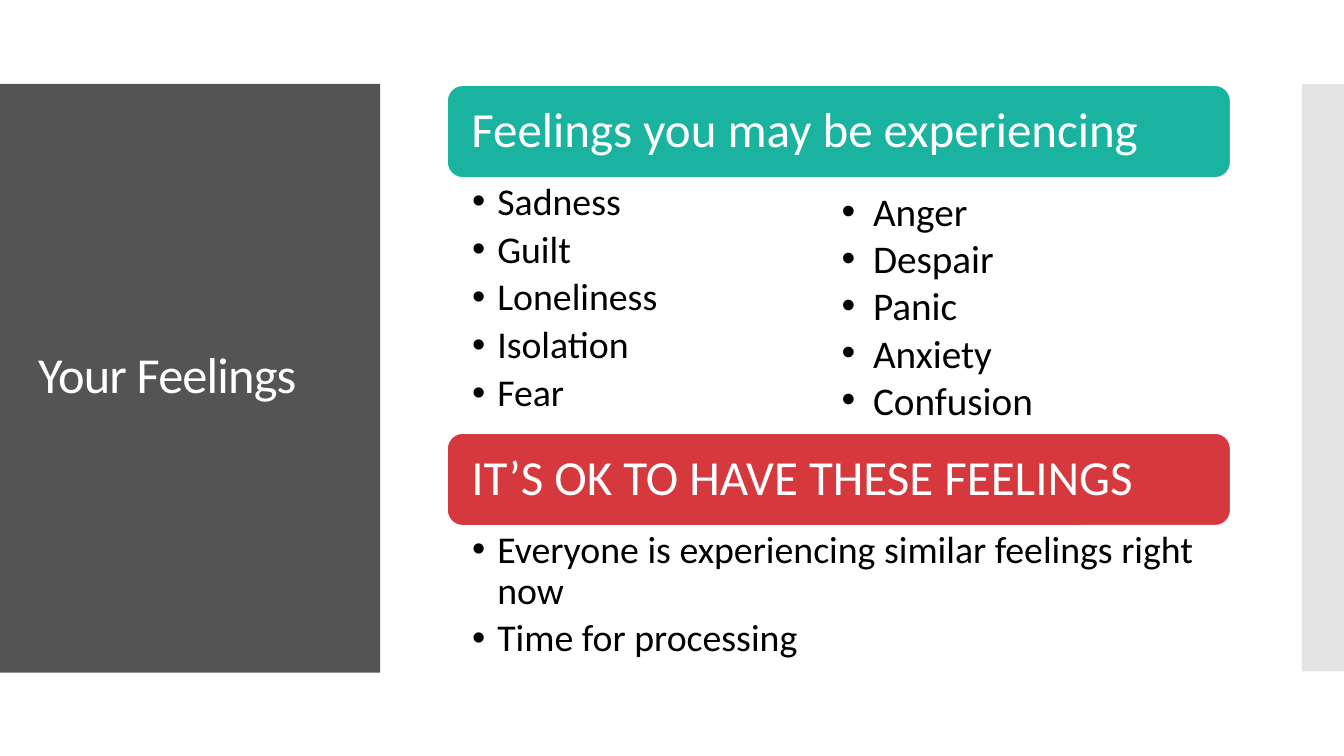
from lxml import etree
from pptx import Presentation
from pptx import util as u
from pptx.dml.color import RGBColor
from pptx.enum import shapes, text
from pptx.oxml.ns import qn

Pt = u.Pt
FONT = "Calibri"
COLORS = {
    "panel": "545454",
    "edge": "C8C8C8",
    "teal": "1AB39F",
    "red": "D5393D",
    "white": "FFFFFF",
    "black": "000000",
}
LEFT, WIDTH, BAR_HEIGHT = 319.5, 559.5, 66


def rgb(name):
    return RGBColor.from_string(COLORS[name])


def set_font(p, size, color):
    p.font.name = FONT
    p.font.size = Pt(size)
    p.font.color.rgb = rgb(color)


def set_frame(tf, anchor, margins):
    tf.word_wrap = True
    tf.vertical_anchor = anchor
    tf.margin_left, tf.margin_top, tf.margin_right, tf.margin_bottom = map(Pt, margins)


def add_box(s, kind, box, fill):
    sp = s.shapes.add_shape(kind, *map(Pt, box))
    sp.shadow.inherit = False
    sp.fill.solid()
    sp.fill.fore_color.rgb = rgb(fill)
    sp.line.fill.background()
    return sp


def add_edge(s):
    sp = add_box(s, shapes.MSO_SHAPE.RECTANGLE, (930, 60, 30, 419.5), "edge")
    color = sp.fill._xPr.find(qn("a:solidFill"))[0]
    etree.SubElement(color, qn("a:alpha"), val="50000")


def add_title(s, words):
    panel = add_box(s, shapes.MSO_SHAPE.RECTANGLE, (0, 60, 271.5, 420.5), "panel")
    title = s.shapes.title
    title.element.addprevious(panel.element)
    title.left, title.top, title.width, title.height = map(Pt, (20, 88.5, 232, 362.5))
    tf = title.text_frame
    tf.text = words
    set_frame(tf, text.MSO_ANCHOR.MIDDLE, (7.2, 3.6, 7.2, 3.6))
    p = tf.paragraphs[0]
    p.alignment = text.PP_ALIGN.LEFT
    p.line_spacing = 0.9
    set_font(p, 36, "white")
    p.runs[0].font._element.set("spc", "-60")


def add_bar(s, top, words, fill):
    sp = add_box(s, shapes.MSO_SHAPE.ROUNDED_RECTANGLE, (LEFT, top, WIDTH, BAR_HEIGHT), fill)
    sp.line.color.rgb = rgb("white")
    sp.line.width = Pt(0.85)
    tf = sp.text_frame
    tf.text = words
    set_frame(tf, text.MSO_ANCHOR.MIDDLE, (14, 11, 14, 11))
    p = tf.paragraphs[0]
    p.alignment = text.PP_ALIGN.LEFT
    p.line_spacing = 0.9
    set_font(p, 35, "white")


def add_bullets(s, box, items, size, indent, margins, spacing=1.0, after=0):
    tf = s.shapes.add_textbox(*map(Pt, box)).text_frame
    set_frame(tf, text.MSO_ANCHOR.TOP, margins)
    tf.text = "\n".join(items)
    for p in tf.paragraphs:
        p.line_spacing = spacing
        p.space_after = Pt(after)
        set_font(p, size, "black")
        pPr = p._p.get_or_add_pPr()
        pPr.set("marL", str(Pt(indent)))
        pPr.set("indent", str(-Pt(indent)))
        bullet_font = etree.Element(qn("a:buFont"), typeface="Arial")
        bullet = etree.Element(qn("a:buChar"), char="•")
        defaults = pPr.find(qn("a:defRPr"))
        defaults.addprevious(bullet_font)
        defaults.addprevious(bullet)


def add_section(s, top, heading, fill, items, height):
    add_bar(s, top, heading, fill)
    add_bullets(s, (LEFT, top + BAR_HEIGHT, WIDTH, height), items,
                27, 18, (17.75, 3.4, 19.2, 3.4), 0.9, 5)


def main():
    prs = Presentation()
    prs.slide_width, prs.slide_height = Pt(960), Pt(540)
    s = prs.slides.add_slide(prs.slide_layouts[5])
    add_edge(s)
    add_title(s, "Your Feelings")
    add_section(s, 61, "Feelings you may be experiencing", "teal",
                ["Sadness", "Guilt", "Loneliness", "Isolation", "Fear"], 183)
    add_section(s, 309.5, "IT’S OK TO HAVE THESE FEELINGS", "red",
                ["Everyone is experiencing similar feelings right now",
                 "Time for processing"], 103)
    add_bullets(s, (594, 130.5, 255.5, 177),
                ["Anger", "Despair", "Panic", "Anxiety", "Confusion"],
                28, 22.5, (7.2, 3.6, 7.2, 3.6))
    prs.save("out.pptx")


if __name__ == "__main__":
    main()
